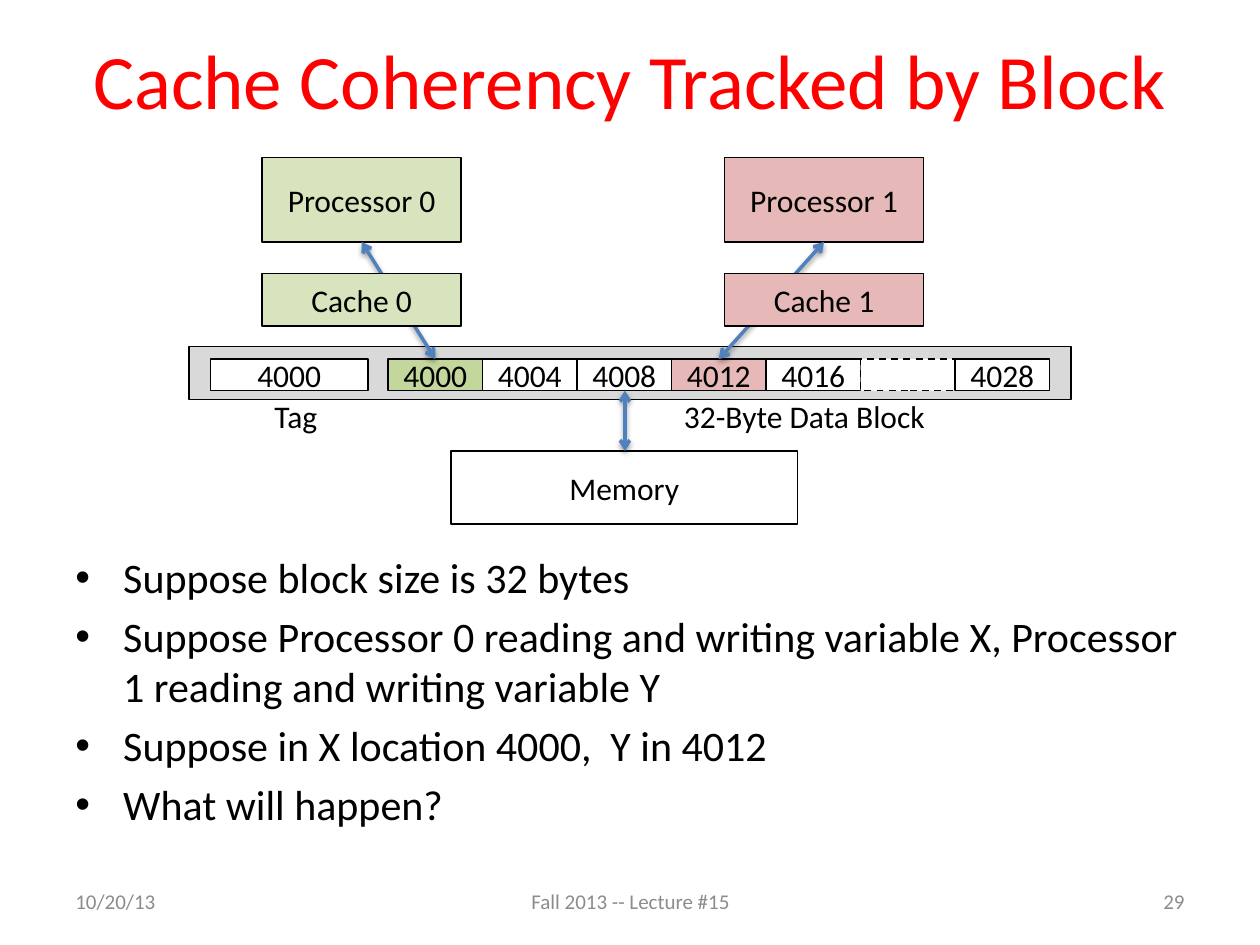
import dataclasses

import pptx
import pptx.dml.color
import pptx.enum.dml
import pptx.enum.shapes
import pptx.enum.text
import pptx.oxml
import pptx.oxml.ns
import pptx.slide
import pptx.text.text
import pptx.util

Inches = pptx.util.Inches
Pt = pptx.util.Pt
RGBColor = pptx.dml.color.RGBColor
Align = pptx.enum.text.PP_ALIGN
Anchor = pptx.enum.text.MSO_ANCHOR

BLACK = RGBColor(0x00, 0x00, 0x00)
WHITE = RGBColor(0xFF, 0xFF, 0xFF)
RED = RGBColor(0xFF, 0x00, 0x00)
GRAY = RGBColor(0x8C, 0x8C, 0x8C)
SILVER = RGBColor(0xD9, 0xD9, 0xD9)
GREEN = RGBColor(0xD7, 0xE4, 0xBD)
OLIVE = RGBColor(0xC3, 0xD6, 0x9B)
PINK = RGBColor(0xE6, 0xB9, 0xB8)
BLUE = RGBColor(0x4F, 0x81, 0xBD)

FONT = "Calibri"
ROW_TOP, ROW_TALL = 2.85, 0.25
CELL_LEFT, CELL_WIDE = 3.08, 0.75
NODE_WIDE = 1.58


@dataclasses.dataclass
class Box:
    text: str
    left: float
    top: float
    wide: float
    tall: float
    fill: RGBColor = WHITE
    dash: bool = False


@dataclasses.dataclass
class Label:
    lines: list[str]
    left: float
    top: float
    wide: float
    tall: float
    size: float = 18
    color: RGBColor = BLACK
    align: Align = Align.LEFT
    anchor: Anchor = Anchor.TOP
    wrap: bool = True
    bullet: bool = False


@dataclasses.dataclass
class Arrow:
    x1: float
    y1: float
    x2: float
    y2: float


def add_run(par: pptx.text.text._Paragraph, text: str, size: float, color: RGBColor) -> None:
    run = par.add_run()
    run.text = text
    run.font.name = FONT
    run.font.size = Pt(size)
    run.font.color.rgb = color


def add_bullet(par: pptx.text.text._Paragraph) -> None:
    par.space_before = Pt(4.8)
    props = par._p.get_or_add_pPr()
    props.set("marL", str(Inches(0.38)))
    props.set("indent", str(-Inches(0.38)))
    space = pptx.oxml.ns.nsdecls("a")
    for tag in ('buFont {} typeface="Arial"', 'buChar {} char="•"'):
        props.append(pptx.oxml.parse_xml(f"<a:{tag.format(space)}/>"))


def draw_box(slide: pptx.slide.Slide, box: Box) -> None:
    shape = slide.shapes.add_shape(
        pptx.enum.shapes.MSO_SHAPE.RECTANGLE,
        Inches(box.left), Inches(box.top), Inches(box.wide), Inches(box.tall))
    shape.shadow.inherit = False
    shape.fill.solid()
    shape.fill.fore_color.rgb = box.fill
    shape.line.color.rgb = BLACK
    shape.line.width = Pt(1)
    if box.dash:
        shape.line.dash_style = pptx.enum.dml.MSO_LINE.DASH
    if box.text:
        shape.text_frame.word_wrap = True
        shape.text_frame.vertical_anchor = Anchor.MIDDLE
        par = shape.text_frame.paragraphs[0]
        par.alignment = Align.CENTER
        add_run(par, box.text, 18, BLACK)


def draw_label(slide: pptx.slide.Slide, label: Label) -> None:
    shape = slide.shapes.add_textbox(
        Inches(label.left), Inches(label.top), Inches(label.wide), Inches(label.tall))
    frame = shape.text_frame
    frame.word_wrap = label.wrap
    frame.vertical_anchor = label.anchor
    for i, line in enumerate(label.lines):
        par = frame.add_paragraph() if i else frame.paragraphs[0]
        par.alignment = label.align
        if label.bullet:
            add_bullet(par)
        add_run(par, line, label.size, label.color)


def draw_arrow(slide: pptx.slide.Slide, arrow: Arrow) -> None:
    """Draw a line with a head at both ends and a soft shadow."""
    link = slide.shapes.add_connector(
        pptx.enum.shapes.MSO_CONNECTOR.STRAIGHT,
        Inches(arrow.x1), Inches(arrow.y1), Inches(arrow.x2), Inches(arrow.y2))
    link.line.color.rgb = BLUE
    link.line.width = Pt(2)
    space = pptx.oxml.ns.nsdecls("a")
    for end in ("headEnd", "tailEnd"):
        link.line._get_or_add_ln().append(
            pptx.oxml.parse_xml(f'<a:{end} {space} type="arrow"/>'))
    link._element.spPr.append(pptx.oxml.parse_xml(
        f'<a:effectLst {space}><a:outerShdw blurRad="{Pt(3.1)}" dist="{Pt(1.6)}" '
        'dir="5400000" rotWithShape="0"><a:srgbClr val="000000">'
        '<a:alpha val="38000"/></a:srgbClr></a:outerShdw></a:effectLst>'))


def main() -> None:
    deck = pptx.Presentation()
    deck.slide_width, deck.slide_height = Inches(10), Inches(7.5)
    slide = deck.slides.add_slide(deck.slide_layouts[6])

    draw_box(slide, Box("", 1.5, 2.75, 7, 0.42, SILVER))

    points = [
        "Suppose block size is 32 bytes",
        "Suppose Processor 0 reading and writing variable X, "
        "Processor 1 reading and writing variable Y",
        "Suppose in X location 4000,  Y in 4012",
        "What will happen?",
    ]
    foot = {"size": 12, "color": GRAY, "anchor": Anchor.MIDDLE}
    labels = [
        Label(["Cache Coherency Tracked by Block"], 0.5, 0, 9, 1.25, 44, RED,
              Align.CENTER, Anchor.MIDDLE),
        Label(points, 0.5, 4.33, 9, 2.52, 24, bullet=True),
        Label(["10/20/13"], 0.5, 6.95, 2.33, 0.4, **foot),
        Label(["Fall 2013 -- Lecture #15"], 3.42, 6.95, 3.17, 0.4,
              align=Align.CENTER, **foot),
        Label(["29"], 7.17, 6.95, 2.33, 0.4, align=Align.RIGHT, **foot),
        Label(["Tag"], 2.08, 3.1, 0.54, 0.4, wrap=False),
        Label(["32-Byte Data Block"], 5.33, 3.1, 2.14, 0.4, wrap=False),
    ]
    for label in labels:
        draw_label(slide, label)

    draw_box(slide, Box("4000", 1.67, ROW_TOP, 1.25, ROW_TALL))
    words = ["4000", "4004", "4008", "4012", "4016", "", "4028"]
    fills = {"4000": OLIVE, "4012": PINK}
    for i, word in enumerate(words):
        draw_box(slide, Box(word, CELL_LEFT + i * CELL_WIDE, ROW_TOP, CELL_WIDE,
                            ROW_TALL, fills.get(word, WHITE), dash=not word))

    # Each cache covers the middle of its processor's arrow.
    nodes = [(2.08, GREEN, 0), (5.75, PINK, 3)]
    for i, (left, fill, cell) in enumerate(nodes):
        draw_box(slide, Box(f"Processor {i}", left, 1.25, NODE_WIDE, 0.67, fill))
        draw_arrow(slide, Arrow(left + NODE_WIDE / 2, 1.92,
                                CELL_LEFT + (cell + 0.5) * CELL_WIDE, ROW_TOP))
        draw_box(slide, Box(f"Cache {i}", left, 2.17, NODE_WIDE, 0.42, fill))

    draw_box(slide, Box("Memory", 3.58, 3.58, 2.75, 0.58))
    draw_arrow(slide, Arrow(4.96, ROW_TOP + ROW_TALL, 4.96, 3.58))

    deck.save("out.pptx")


if __name__ == "__main__":
    main()
